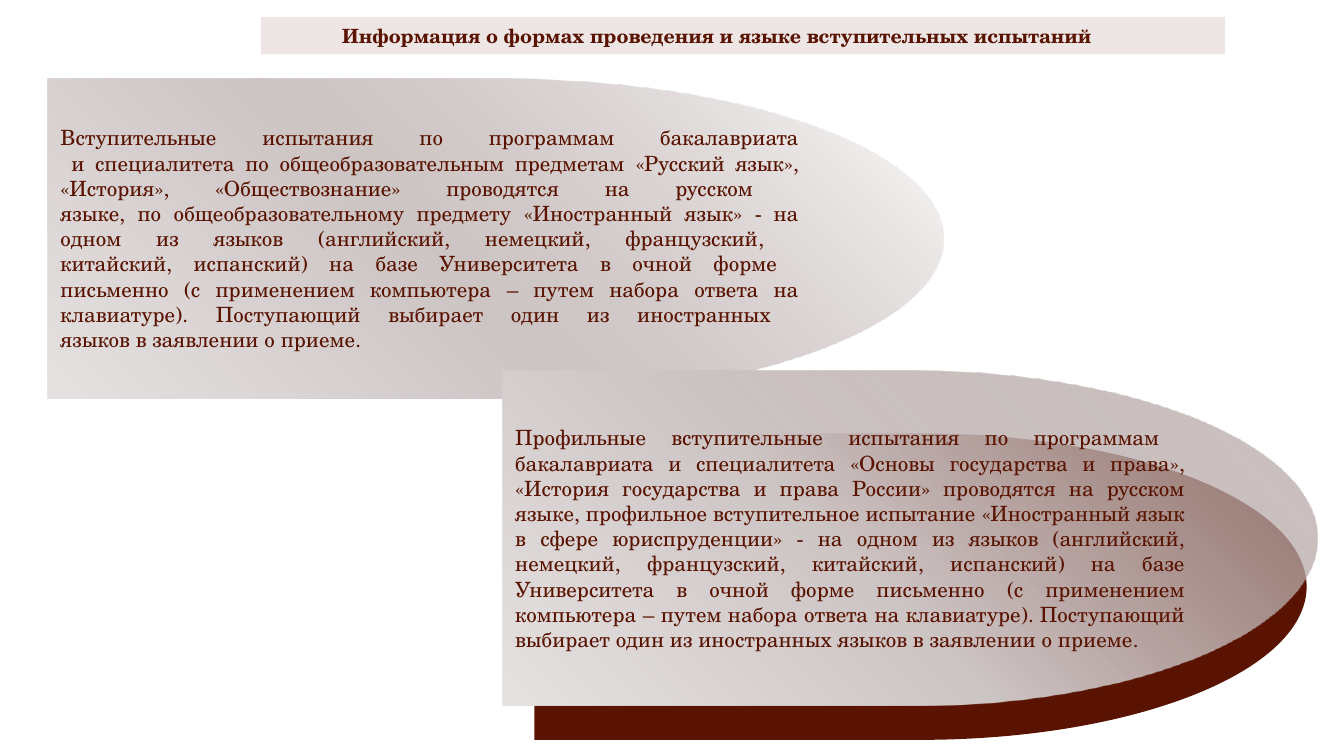
from pptx import Presentation
from pptx.dml.color import RGBColor
from pptx.enum.shapes import MSO_SHAPE
from pptx.enum.text import MSO_ANCHOR, MSO_AUTO_SIZE, PP_ALIGN
from pptx.oxml import parse_xml
from pptx.oxml.ns import nsdecls, qn
from pptx.util import Inches, Pt

RECTANGLE = MSO_SHAPE.RECTANGLE
DELAY = MSO_SHAPE.FLOWCHART_DELAY
JUSTIFY = PP_ALIGN.JUSTIFY
TOP, MIDDLE = MSO_ANCHOR.TOP, MSO_ANCHOR.MIDDLE
FIT_SHAPE = MSO_AUTO_SIZE.SHAPE_TO_FIT_TEXT

FONT = "TeX Gyre Schola"
MAROON = "591300"
GRADIENT = [(0, "AE9D9C"), (57, "CDC4C4"), (100, "E6E2E2")]

TITLE = "Информация о формах проведения и языке вступительных испытаний"
GENERAL_EXAMS = [
    "Вступительные испытания по программам бакалавриата",
    " и специалитета по общеобразовательным предметам «Русский язык», "
    "«История», «Обществознание» проводятся на русском ",
    "языке, по общеобразовательному предмету «Иностранный язык» - на "
    "одном из языков (английский, немецкий, французский, ",
    "китайский, испанский) на базе Университета в очной форме ",
    "письменно (с применением компьютера – путем набора ответа на "
    "клавиатуре). Поступающий выбирает один из иностранных ",
    "языков в заявлении о приеме.",
]
PROFILE_EXAMS = [
    "Профильные вступительные испытания по программам ",
    "бакалавриата и специалитета «Основы государства и права», "
    "«История государства и права России» проводятся на русском языке, "
    "профильное вступительное испытание «Иностранный язык в сфере "
    "юриспруденции» - на одном из языков (английский, немецкий, "
    "французский, китайский, испанский) на базе Университета в очной форме "
    "письменно (с применением компьютера – путем набора ответа на "
    "клавиатуре). Поступающий выбирает один из иностранных языков в "
    "заявлении о приеме.",
]


def color(value):
    return RGBColor.from_string(value)


def add_solid(slide, kind, box, fill):
    shape = slide.shapes.add_shape(kind, *[Inches(length) for length in box])
    shape.shadow.inherit = False
    shape.line.fill.background()
    shape.fill.solid()
    shape.fill.fore_color.rgb = color(fill)
    return shape


def set_opacity(shape, percent):
    solid = shape._element.spPr.find(qn("a:solidFill"))
    solid[0].append(parse_xml(f'<a:alpha {nsdecls("a")} val="{percent * 1000}"/>'))


def set_gradient(shape, first_opacity):
    """Radial gradient centred on the top right corner."""
    stops = ""
    for position, value in GRADIENT:
        opacity = first_opacity if position == 0 else 100
        stops += (f'<a:gs pos="{position * 1000}"><a:srgbClr val="{value}">'
                  f'<a:alpha val="{opacity * 1000}"/></a:srgbClr></a:gs>')
    gradient = parse_xml(
        f'<a:gradFill {nsdecls("a")}><a:gsLst>{stops}</a:gsLst><a:path path="circle">'
        '<a:fillToRect l="100000" b="100000"/></a:path></a:gradFill>')
    properties = shape._element.spPr
    properties.replace(properties.find(qn("a:solidFill")), gradient)


def write_text(shape, lines, size, anchor, bold=False):
    frame = shape.text_frame
    frame.word_wrap = True
    frame.vertical_anchor = anchor
    frame.margin_left = frame.margin_right = Inches(0.13)
    frame.margin_top = frame.margin_bottom = Inches(0.07)
    paragraph = frame.paragraphs[0]
    paragraph.alignment = JUSTIFY
    for index, line in enumerate(lines):
        if index:
            paragraph.add_line_break()
        run = paragraph.add_run()
        run.text = line
        run.font.name = FONT
        run.font.size = Pt(size)
        run.font.bold = bold
        run.font.color.rgb = color(MAROON)
    return paragraph


def add_title(slide, box):
    band = add_solid(slide, RECTANGLE, box, MAROON)
    set_opacity(band, 10)
    paragraph = write_text(band, [TITLE], 14, TOP, bold=True)
    paragraph._p.get_or_add_pPr().set("indent", str(Inches(0.67)))
    band.text_frame.auto_size = FIT_SHAPE


def add_exam_panel(slide, box, lines, first_opacity):
    panel = add_solid(slide, DELAY, box, MAROON)
    set_gradient(panel, first_opacity)
    write_text(panel, lines, 15, MIDDLE)


def main():
    presentation = Presentation()
    presentation.slide_width = Inches(13.33)
    presentation.slide_height = Inches(7.5)
    slide = presentation.slides.add_slide(presentation.slide_layouts[6])

    add_title(slide, (2.59, 0.17, 9.56, 0.37))
    add_exam_panel(slide, (0.47, 0.78, 8.89, 3.17), GENERAL_EXAMS, 0)
    # Dark backing behind the second panel
    add_solid(slide, DELAY, (5.3, 4.3, 7.66, 3.04), MAROON)
    add_exam_panel(slide, (4.98, 3.68, 8.09, 3.32), PROFILE_EXAMS, 62)

    presentation.save("out.pptx")


if __name__ == "__main__":
    main()
